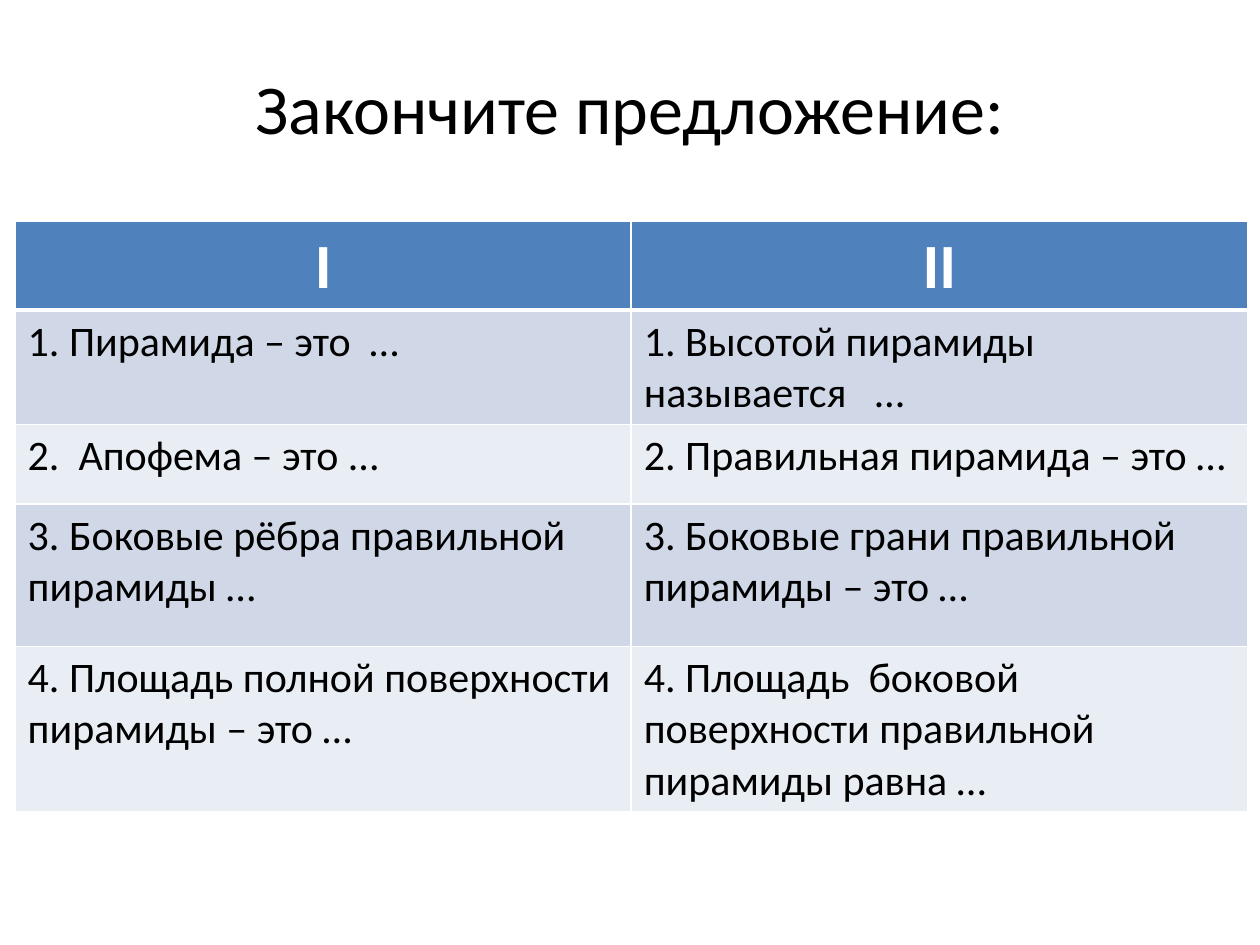
from typing import NamedTuple

from lxml.etree import SubElement
from pptx import Presentation
from pptx.dml.color import RGBColor
from pptx.enum.text import MSO_ANCHOR, PP_ALIGN
from pptx.oxml.ns import qn
from pptx.util import Inches, Pt

COLORS = {
    "text": "000000",
    "white": "FFFFFF",
    "header": "4F81BD",
    "odd": "D0D8E8",
    "even": "E9EDF4",
}
FONT = "Calibri"
TITLE_FORMAT = {"name": FONT, "size": Pt(40), "bold": False}
HEADER_FORMAT = {"name": FONT, "size": Pt(36), "bold": True}
BODY_FORMAT = {"name": FONT, "size": Pt(24), "bold": False}


class Row(NamedTuple):
    height: float
    first: str
    second: str


ROWS = [
    Row(0.68, "I", "II"),
    Row(0.91, "1. Пирамида – это  …", "1. Высотой пирамиды называется   …"),
    Row(0.63, "2.  Апофема – это ...", "2. Правильная пирамида – это …"),
    Row(1.13, "3. Боковые рёбра правильной пирамиды …",
        "3. Боковые грани правильной пирамиды – это …"),
    Row(1.31, "4. Площадь полной поверхности пирамиды – это …",
        "4. Площадь  боковой поверхности правильной пирамиды равна …"),
]


def rgb(name: str) -> RGBColor:
    return RGBColor.from_string(COLORS[name])


def write(tf, text: str, fmt: dict, color: str, align: PP_ALIGN) -> None:
    p = tf.paragraphs[0]
    p.alignment = align
    r = p.add_run()
    r.text = text
    for key, value in fmt.items():
        setattr(r.font, key, value)
    r.font.color.rgb = rgb(color)


def add_borders(cell, widths: dict[str, int]) -> None:
    """Draw white borders; widths are points by side (L, R, T, B)."""
    tcPr = cell._tc.get_or_add_tcPr()
    for side, width in widths.items():
        ln = SubElement(tcPr, qn(f"a:ln{side}"), w=str(Pt(width)))
        fill = SubElement(ln, qn("a:solidFill"))
        SubElement(fill, qn("a:srgbClr"), val=COLORS["white"])


def add_title(s, text: str) -> None:
    sp = s.shapes.add_textbox(Inches(0.5), Inches(0.22), Inches(9), Inches(1.25))
    tf = sp.text_frame
    tf.word_wrap = True
    tf.vertical_anchor = MSO_ANCHOR.MIDDLE
    write(tf, text, TITLE_FORMAT, "text", PP_ALIGN.CENTER)


def add_sentence_table(s, rows: list[Row]) -> None:
    height = sum(row.height for row in rows)
    table = s.shapes.add_table(len(rows), 2, Inches(0.12), Inches(1.76),
                               Inches(9.78), Inches(height)).table
    for i, row in enumerate(rows):
        table.rows[i].height = Inches(row.height)
        for j, text in enumerate((row.first, row.second)):
            cell = table.cell(i, j)
            add_borders(cell, {"L": 1, "R": 1, "T": 3 if i == 1 else 1,
                               "B": 3 if i == 0 else 1})
            cell.fill.solid()
            if i == 0:
                cell.fill.fore_color.rgb = rgb("header")
                write(cell.text_frame, text, HEADER_FORMAT, "white", PP_ALIGN.CENTER)
            else:
                cell.fill.fore_color.rgb = rgb("odd" if i % 2 else "even")
                write(cell.text_frame, text, BODY_FORMAT, "text", PP_ALIGN.LEFT)


def main() -> None:
    prs = Presentation()
    prs.slide_width, prs.slide_height = Inches(10), Inches(7.5)
    s = prs.slides.add_slide(prs.slide_layouts[6])
    add_title(s, "Закончите предложение:")
    add_sentence_table(s, ROWS)
    prs.save("out.pptx")


if __name__ == "__main__":
    main()
